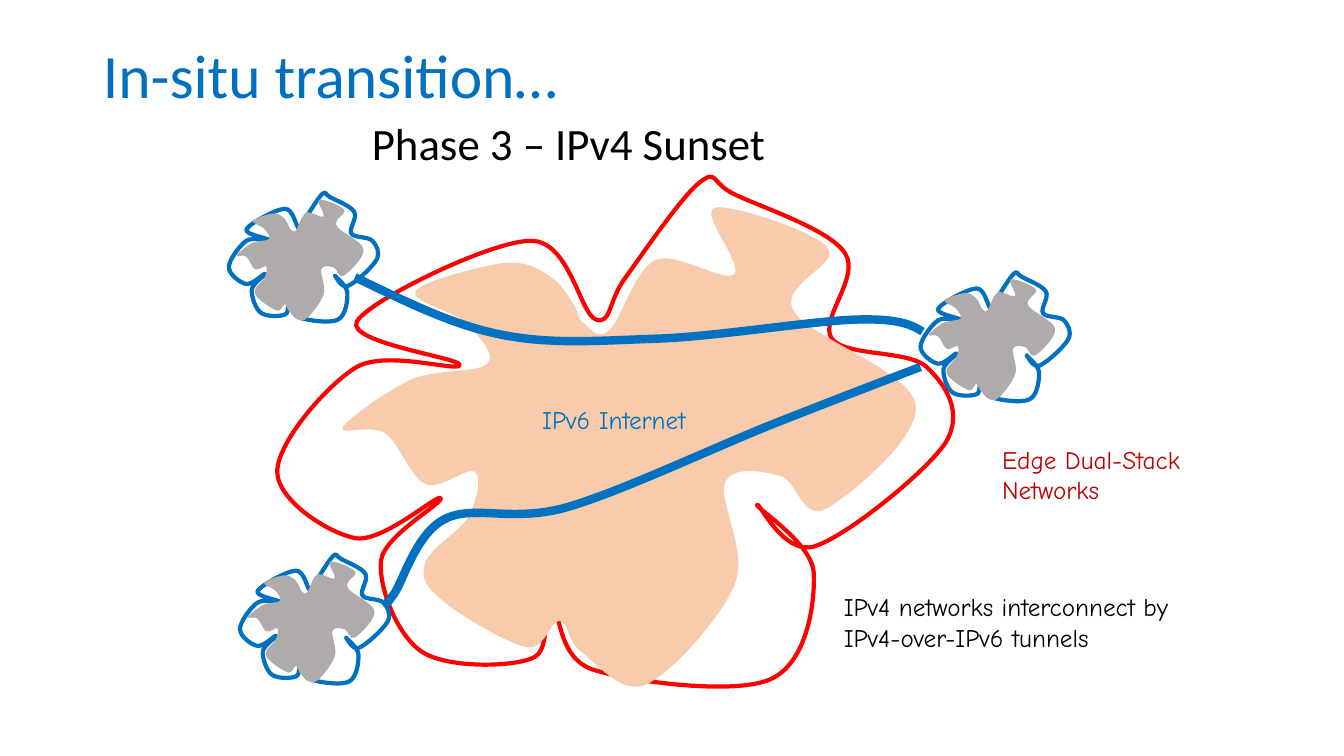
from lxml.etree import SubElement
from pptx import Presentation
from pptx.dml.color import RGBColor
from pptx.enum.text import MSO_ANCHOR as Anchor, MSO_AUTO_SIZE as AutoSize, PP_ALIGN as Align
from pptx.oxml.ns import qn
from pptx.util import Inches, Pt

UNIT = Inches(0.01)  # all boxes and outlines lie on a grid of 100 steps per inch
BLUE, RED, DARK_RED, PEACH, GREY, BLACK = "0070C0", "FF0000", "C00000", "F8CBAD", "AFABAB", "000000"
BODY, NOTE = "Calibri", "Comic Neue"

# Each outline: its frame, its start, then curves as two control points and an end point.
RING = ((275, 175, 670, 506), (591, 317), [
    (575, 311, 565, 238, 526, 239), (487, 239, 366, 298, 354, 319),
    (343, 340, 456, 355, 456, 362), (456, 370, 385, 347, 354, 364),
    (324, 382, 275, 439, 275, 468), (275, 496, 325, 529, 353, 534),
    (380, 538, 433, 491, 437, 494), (442, 498, 381, 531, 378, 556),
    (375, 582, 394, 631, 419, 647), (444, 663, 507, 662, 528, 653),
    (549, 645, 536, 596, 546, 598), (556, 599, 551, 651, 587, 664),
    (623, 676, 728, 690, 764, 674), (801, 658, 809, 596, 807, 567),
    (804, 538, 751, 505, 751, 501), (752, 496, 777, 552, 808, 542),
    (840, 532, 919, 468, 938, 439), (956, 409, 938, 382, 919, 364),
    (900, 347, 839, 354, 825, 336), (812, 317, 854, 275, 838, 251),
    (822, 227, 753, 205, 729, 193), (705, 182, 712, 167, 694, 181),
    (676, 195, 636, 254, 620, 276), (604, 297, 606, 323, 591, 317)])
CORE = ((340, 206, 569, 475), (577, 319), [
    (572, 315, 575, 311, 570, 304), (565, 296, 557, 281, 545, 274),
    (534, 266, 522, 259, 499, 261), (477, 264, 418, 279, 412, 289),
    (406, 299, 451, 309, 463, 321), (475, 334, 493, 352, 483, 361),
    (474, 370, 433, 366, 409, 376), (385, 387, 345, 415, 340, 424),
    (336, 433, 368, 420, 382, 430), (396, 439, 407, 474, 422, 480),
    (436, 487, 463, 463, 471, 468), (478, 473, 473, 497, 465, 512),
    (457, 527, 426, 544, 422, 558), (417, 572, 421, 581, 438, 595),
    (454, 609, 502, 638, 522, 642), (541, 645, 546, 615, 555, 616),
    (564, 617, 563, 637, 577, 647), (592, 658, 616, 690, 641, 679),
    (667, 667, 716, 612, 729, 579), (742, 546, 712, 497, 719, 479),
    (727, 461, 757, 468, 774, 472), (790, 476, 796, 517, 819, 505),
    (841, 493, 914, 434, 908, 401), (903, 368, 801, 334, 787, 308),
    (772, 282, 834, 263, 821, 246), (808, 229, 724, 202, 709, 206),
    (693, 211, 738, 263, 728, 272), (718, 281, 671, 249, 650, 258),
    (629, 268, 616, 318, 604, 328), (593, 339, 583, 323, 577, 319)])
UPPER_TUNNEL = ((352, 275, 563, 64), (352, 275), [
    (400, 298, 447, 322, 497, 332), (547, 342, 593, 338, 652, 336),
    (711, 334, 807, 318, 851, 317), (894, 316, 905, 323, 915, 329)])
LOWER_TUNNEL = ((384, 364, 530, 235), (385, 596), [
    (383, 599, 381, 603, 391, 589), (400, 576, 413, 529, 441, 515),
    (470, 500, 508, 519, 563, 503), (618, 487, 712, 442, 771, 419),
    (829, 396, 913, 364, 913, 364)])


def color(hex_string):
    return RGBColor.from_string(hex_string)


def add_curve(slide, outline, box=None, fill=None, line=None, weight=3, closed=True):
    """Draw an outline as Bezier curves, stretched from its own frame to box."""
    frame, start, curves = outline
    frame_left, frame_top, frame_width, frame_height = frame
    left, top, width, height = box or frame
    scale = (UNIT * width / frame_width, UNIT * height / frame_height)
    builder = slide.shapes.build_freeform(0, 0, scale=scale)
    builder.add_line_segments([(frame_width, frame_height)], close=False)
    shape = builder.convert_to_shape(round(left * UNIT), round(top * UNIT))

    geometry = shape._element.xpath(".//a:path")[0]
    for diagonal_step in list(geometry):
        geometry.remove(diagonal_step)
    steps = [("a:moveTo", start)] + [("a:cubicBezTo", curve) for curve in curves]
    for tag, numbers in steps:
        step = SubElement(geometry, qn(tag))
        for x, y in zip(numbers[::2], numbers[1::2]):
            SubElement(step, qn("a:pt"), x=str(x - frame_left), y=str(y - frame_top))
    if closed:
        SubElement(geometry, qn("a:close"))

    shape.shadow.inherit = False
    if fill:
        shape.fill.solid()
        shape.fill.fore_color.rgb = color(fill)
    else:
        shape.fill.background()
    if line:
        shape.line.color.rgb = color(line)
        shape.line.width = Pt(weight)
    else:
        shape.line.fill.background()
    return shape


def add_cloud(slide, box, core_offset, ring_color, core_color):
    """Draw a ring filling box and its core, both in the proportions of the large cloud."""
    left, top, width, height = box
    core_box = (left + core_offset[0], top + core_offset[1],
                width * CORE[0][2] / RING[0][2], height * CORE[0][3] / RING[0][3])
    return [add_curve(slide, RING, box, line=ring_color),
            add_curve(slide, CORE, core_box, fill=core_color)]


def add_edge_network(slide, left, top):
    parts = add_cloud(slide, (left, top, 148, 128), (8, 7), BLUE, GREY)
    slide.shapes.add_group_shape(parts)


def add_tunnel(slide, outline):
    add_curve(slide, outline, line=BLUE, weight=6, closed=False)


def write(frame, *lines, size=18, font=NOTE, ink=BLACK, spacing=None, fit=AutoSize.SHAPE_TO_FIT_TEXT):
    frame.word_wrap = True
    frame.auto_size = fit
    frame.vertical_anchor = Anchor.TOP
    for number, line in enumerate(lines):
        paragraph = frame.add_paragraph() if number else frame.paragraphs[0]
        paragraph.alignment = Align.LEFT
        paragraph.line_spacing = spacing
        run = paragraph.add_run()
        run.text = line
        run.font.size, run.font.name = Pt(size), font
        run.font.color.rgb = color(ink)


def add_label(slide, box, *lines, **style):
    label = slide.shapes.add_textbox(*(UNIT * length for length in box))
    write(label.text_frame, *lines, **style)


def add_title(slide, box, text):
    title = slide.shapes.title
    title.left, title.top, title.width, title.height = (UNIT * length for length in box)
    write(title.text_frame, text, size=44, font=BODY, ink=BLUE, spacing=0.9, fit=AutoSize.NONE)


def build_transition_slide(deck):
    slide = deck.slides.add_slide(deck.slide_layouts[5])
    add_title(slide, (92, 40, 1023, 143), "In-situ transition…")
    add_cloud(slide, RING[0], (65, 31), RED, PEACH)
    add_label(slide, (528, 396, 200, 40), "IPv6 Internet", ink=BLUE)
    add_label(slide, (359, 110, 587, 64), "Phase 3 – IPv4 Sunset", size=32, font=BODY)
    add_edge_network(slide, 913, 270)
    add_label(slide, (984, 436, 277, 71), "Edge Dual-Stack Networks", ink=DARK_RED)
    add_tunnel(slide, UPPER_TUNNEL)
    add_tunnel(slide, LOWER_TUNNEL)
    add_label(slide, (827, 582, 421, 71), "IPv4 networks interconnect by", "IPv4-over-IPv6 tunnels")
    for left, top in ((227, 191), (238, 550)):
        add_edge_network(slide, left, top)


def main():
    deck = Presentation()
    deck.slide_width, deck.slide_height = Inches(13.33), Inches(7.5)
    build_transition_slide(deck)
    deck.save("out.pptx")


if __name__ == "__main__":
    main()
